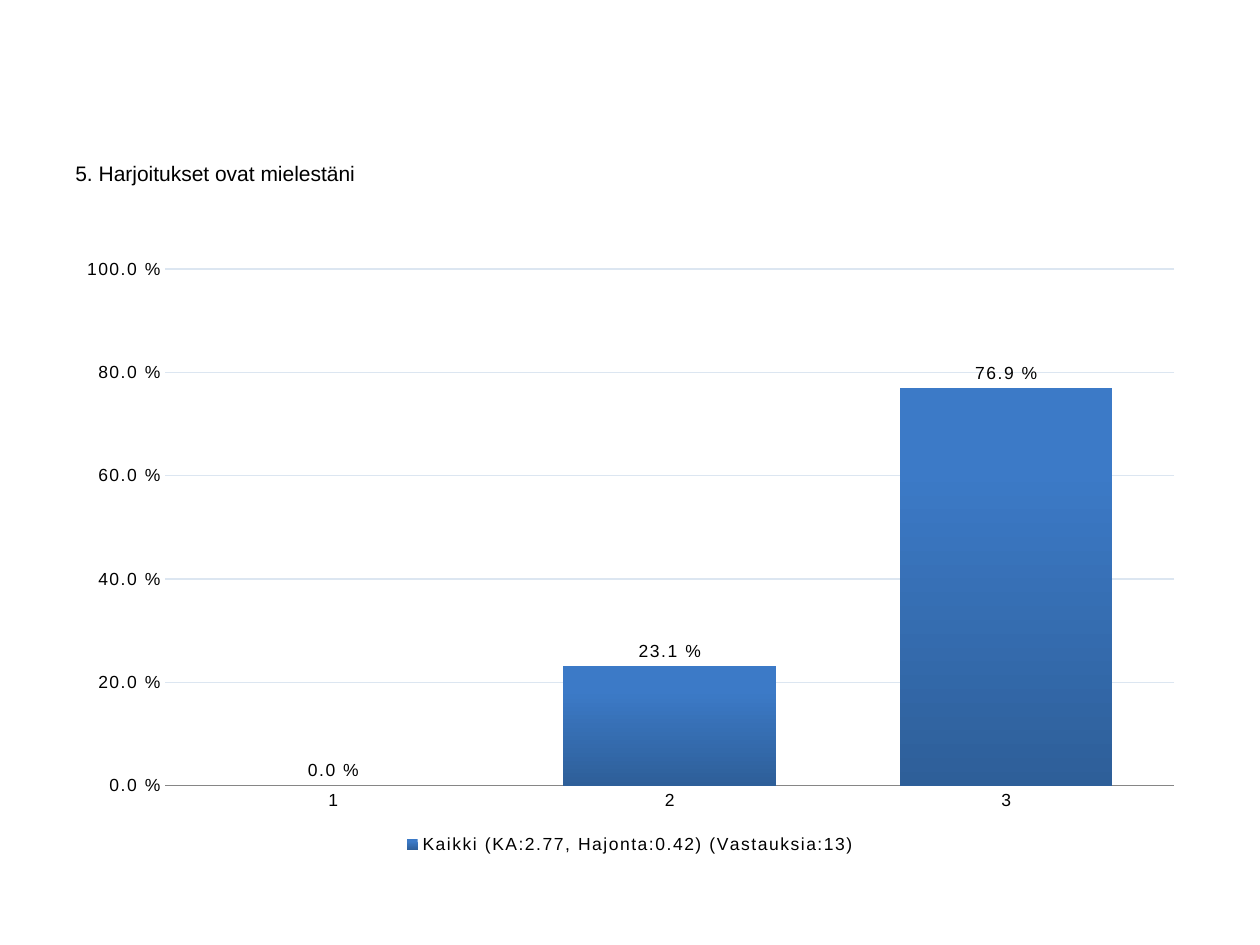
from lxml.etree import SubElement
from pptx import Presentation
from pptx.chart.data import CategoryChartData
from pptx.dml.color import RGBColor
from pptx.enum.chart import (XL_CHART_TYPE, XL_LABEL_POSITION,
                             XL_LEGEND_POSITION, XL_TICK_MARK)
from pptx.oxml.ns import qn
from pptx.util import Cm, Pt

COLORS = {"text": "000000", "bar_top": "3C7AC7", "bar_bottom": "2E5F99",
          "grid": "DCE6F1", "axis": "868686"}
PERCENT = r"0.0\ %"


def rgb(name):
    return RGBColor.from_string(COLORS[name])


class SlideBuilder:
    font = "Arial"

    def __init__(self, slide):
        self.s = slide

    def style(self, font, size, spacing=None):
        font.name, font.size = self.font, Pt(size)
        font.color.rgb = rgb("text")
        if spacing:
            font._element.set("spc", str(spacing))

    def text(self, text, left, top, width, height, size):
        tf = self.s.shapes.add_textbox(left, top, width, height).text_frame
        tf.word_wrap = True
        tf.text = text
        p = tf.paragraphs[0]
        p.space_before = Pt(size * 0.2)
        self.style(p.runs[0].font, size)

    def column_chart(self, cats, name, values, left, top, width, height, plot_area):
        data = CategoryChartData(number_format=PERCENT)
        data.categories = cats
        data.add_series(name, values)
        chart = self.s.shapes.add_chart(XL_CHART_TYPE.COLUMN_CLUSTERED,
                                        left, top, width, height, data).chart
        chart.has_title = False
        self.style(chart.font, 10, 100)
        self.axes(chart)
        self.bars(chart.plots[0])
        self.place_plot(chart, plot_area)
        chart.has_legend = True
        chart.legend.position = XL_LEGEND_POSITION.BOTTOM
        chart.legend.include_in_layout = False
        self.style(chart.legend.font, 10, 100)

    def axes(self, chart):
        val, cat = chart.value_axis, chart.category_axis
        for axis in (val, cat):
            axis.major_tick_mark = axis.minor_tick_mark = XL_TICK_MARK.NONE
            self.style(axis.tick_labels.font, 10, 100)
        val.minimum_scale, val.maximum_scale, val.major_unit = 0, 1, 0.2
        val.tick_labels.number_format = PERCENT
        val.tick_labels.number_format_is_linked = False
        val.format.line.fill.background()
        for line, color in ((val.major_gridlines.format.line, "grid"),
                            (cat.format.line, "axis")):
            line.width = Pt(0.75)
            line.color.rgb = rgb(color)

    def bars(self, plot):
        plot.gap_width = 58
        plot.vary_by_categories = False
        fill = plot.series[0].format.fill
        fill.gradient()
        fill.gradient_angle = 270
        top, bottom = fill.gradient_stops
        top.color.rgb, bottom.color.rgb = rgb("bar_top"), rgb("bar_bottom")
        top.position = 0.2
        plot.has_data_labels = True
        labels = plot.data_labels
        labels.show_value = True
        labels.number_format = PERCENT
        labels.number_format_is_linked = False
        labels.position = XL_LABEL_POSITION.OUTSIDE_END
        self.style(labels.font, 10, 100)

    def place_plot(self, chart, plot_area):
        """Fix the inner plot area, as fractions (x, y, w, h) of the chart."""
        area = chart._chartSpace.chart.plotArea
        for old in area.findall(qn("c:layout")):
            area.remove(old)
        layout = area.makeelement(qn("c:layout"))
        area.insert(0, layout)
        manual = SubElement(layout, qn("c:manualLayout"))
        settings = [("layoutTarget", "inner"), ("xMode", "edge"), ("yMode", "edge")]
        settings += zip("xywh", plot_area)
        for tag, value in settings:
            SubElement(manual, qn("c:" + tag)).set("val", str(value))


def main():
    prs = Presentation()
    prs.slide_width, prs.slide_height = Cm(25.4), Cm(19.05)
    slide = SlideBuilder(prs.slides.add_slide(prs.slide_layouts[6]))
    left, width = Cm(1.27), Cm(22.86)
    slide.text("5. Harjoitukset ovat mielestäni", left, Cm(3.12), width, Cm(1.5), 12)
    slide.column_chart(["1", "2", "3"],
                       "Kaikki (KA:2.77, Hajonta:0.42) (Vastauksia:13)",
                       [0, 0.231, 0.769],
                       left, Cm(4.93), width, Cm(12.4), (0.09, 0.04, 0.89, 0.84))
    prs.save("out.pptx")


if __name__ == "__main__":
    main()
